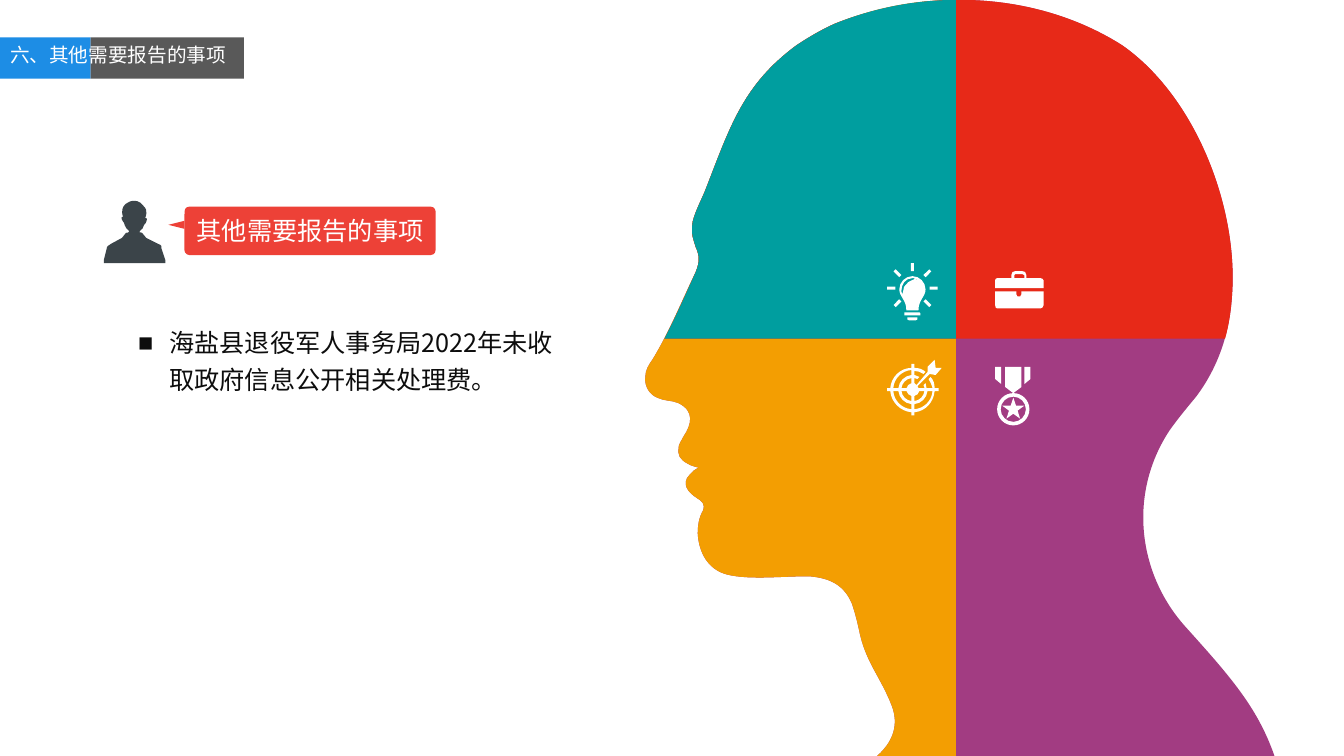
from math import asin, cos, pi, radians, sin, tan

from lxml import etree
from pptx import Presentation
from pptx.dml.color import RGBColor
from pptx.enum.shapes import MSO_SHAPE
from pptx.enum.text import MSO_ANCHOR, MSO_AUTO_SIZE, PP_ALIGN
from pptx.oxml.ns import qn
from pptx.util import Inches, Pt

RECT, ROUNDED, TRIANGLE = MSO_SHAPE.RECTANGLE, MSO_SHAPE.ROUNDED_RECTANGLE, MSO_SHAPE.ISOSCELES_TRIANGLE
TOP, MIDDLE = MSO_ANCHOR.TOP, MSO_ANCHOR.MIDDLE
LEFT, CENTER = PP_ALIGN.LEFT, PP_ALIGN.CENTER
NO_FIT = MSO_AUTO_SIZE.NONE

WHITE = RGBColor(0xFF, 0xFF, 0xFF)
INK = RGBColor(0x0D, 0x0D, 0x0D)
BLUE = RGBColor(0x1D, 0x8D, 0xE5)
GRAY = RGBColor(0x59, 0x59, 0x59)
SLATE = RGBColor(0x3B, 0x44, 0x49)
CORAL = RGBColor(0xED, 0x41, 0x37)
PURPLE = RGBColor(0xA2, 0x3C, 0x82)
ORANGE = RGBColor(0xF3, 0x9E, 0x02)
RED = RGBColor(0xE7, 0x29, 0x18)
TEAL = RGBColor(0x00, 0x9E, 0x9F)
CJK = "Noto Sans CJK SC"

# Content
HEADING = "六、其他需要报告的事项"
CALLOUT = "其他需要报告的事项"
STATEMENT = "海盐县退役军人事务局2022年未收取政府信息公开相关处理费。"

# Outlines in inches: a pair is a straight step, six numbers are a cubic curve
PERSON = [
    (1.6, 2.46), (1.61, 2.45, 1.6, 2.43, 1.57, 2.42), (1.45, 2.36), (1.41, 2.31),
    (1.38, 2.3, 1.37, 2.31, 1.39, 2.29), (1.41, 2.28, 1.42, 2.26, 1.43, 2.23), (1.44, 2.22),
    (1.44, 2.22, 1.48, 2.16, 1.44, 2.16), (1.44, 2.16, 1.48, 2.09, 1.42, 2.04), (1.39, 2.01),
    (1.31, 1.96, 1.24, 2.03, 1.24, 2.03), (1.19, 2.08, 1.22, 2.15, 1.22, 2.15),
    (1.18, 2.15, 1.23, 2.21, 1.23, 2.21), (1.24, 2.24), (1.25, 2.26, 1.26, 2.28, 1.28, 2.29),
    (1.29, 2.31, 1.25, 2.31, 1.25, 2.31), (1.21, 2.36), (1.1, 2.42),
    (1.05, 2.45, 1.06, 2.46, 1.06, 2.46), (1.03, 2.58), (1.03, 2.61), (1.64, 2.61), (1.64, 2.58)]

NAPE = [
    (11.75, 6.21), (11.28, 5.68, 11.19, 4.89, 11.6, 4.27), (11.67, 4.17, 11.76, 4.06, 11.86, 3.94),
    (12.08, 3.65, 12.2, 3.3, 12.22, 2.92)]
BACK_EDGE = [(12.15, 3.36), (12.19, 3.22, 12.21, 3.07, 12.22, 2.92)]
CROWN = [(12.28, 2.06, 11.86, 0.96, 11.13, 0.45), (10.31, -0.07, 9.22, -0.14, 8.27, 0.24)]
FRONT_CROWN = [(9.48, 0), (9.07, 0, 8.66, 0.08, 8.27, 0.24)]
BROW = [
    (8.14, 0.3, 8.02, 0.37, 7.9, 0.45), (7.37, 0.84, 7.24, 1.26, 7.01, 1.85),
    (6.97, 1.96, 6.9, 2.08, 6.87, 2.2), (6.85, 2.33, 6.88, 2.38, 6.9, 2.45),
    (6.94, 2.54, 6.94, 2.6, 6.9, 2.7)]
NOSE_BRIDGE = [(6.8, 2.92, 6.7, 3.15, 6.59, 3.36)]
FACE = [
    (6.76, 2.99, 6.64, 3.29, 6.47, 3.57), (6.44, 3.61, 6.4, 3.67, 6.4, 3.74),
    (6.39, 3.83, 6.44, 3.92, 6.53, 3.95), (6.59, 3.98, 6.66, 3.97, 6.73, 4),
    (6.89, 4.08, 6.86, 4.21, 6.78, 4.33), (6.76, 4.37, 6.73, 4.41, 6.73, 4.44),
    (6.72, 4.51, 6.74, 4.56, 6.82, 4.6), (6.85, 4.62, 6.89, 4.63, 6.93, 4.64),
    (6.89, 4.66, 6.86, 4.68, 6.84, 4.71), (6.75, 4.8, 6.83, 4.89, 6.91, 4.94),
    (6.96, 4.97, 7, 5, 6.97, 5.07), (6.93, 5.14, 6.92, 5.22, 6.92, 5.29),
    (6.93, 5.48, 7.02, 5.65, 7.21, 5.7), (7.45, 5.76, 7.8, 5.71, 8.05, 5.72),
    (8.23, 5.74, 8.37, 5.8, 8.45, 5.99), (8.48, 6.08, 8.5, 6.16, 8.52, 6.25),
    (8.58, 6.56, 8.73, 6.71, 8.84, 6.99), (8.9, 7.14, 8.9, 7.32, 8.7, 7.5)]
SHOULDER = [(12.64, 7.5), (12.47, 7.01, 12.19, 6.7, 11.75, 6.21)]

BULB = [
    [(8.97, 3.1), (9.12, 3.1), (9.13, 3.11), (9.13, 3.13), (8.97, 3.13)],
    [(9.1, 3.15), (9.1, 3.17), (9.08, 3.18), (9.02, 3.18), (9, 3.17), (9, 3.15)],
    [(9.05, 2.74), (9.12, 2.74, 9.18, 2.8, 9.18, 2.87), (9.18, 2.95, 9.11, 2.97, 9.11, 3.08),
     (8.99, 3.08), (8.99, 2.97, 8.92, 2.95, 8.92, 2.87), (8.92, 2.8, 8.98, 2.74, 9.05, 2.74)],
    [(9.07, 2.76), (9.07, 2.77), (9.11, 2.78), (9.09, 2.78), (9.07, 2.77),
     (9.05, 2.78, 9.01, 2.79, 8.99, 2.82), (8.97, 2.83, 8.96, 2.86, 8.96, 2.88), (8.95, 2.92),
     (8.94, 2.89), (8.94, 2.82, 8.98, 2.76, 9.05, 2.76)]]
BRIEFCASE = [
    [(9.87, 2.89), (10.08, 2.89), (10.08, 2.92), (10.09, 2.94), (10.12, 2.94), (10.13, 2.92),
     (10.13, 2.89), (10.35, 2.89), (10.35, 3.03), (10.35, 3.05, 10.33, 3.06, 10.32, 3.06),
     (9.89, 3.06), (9.88, 3.06, 9.87, 3.05, 9.87, 3.03)],
    [(10.06, 2.76), (10.16, 2.76), (10.16, 2.73), (10.14, 2.72), (10.07, 2.72), (10.06, 2.73)],
    [(9.89, 2.76), (10.03, 2.76), (10.03, 2.73), (10.03, 2.7, 10.05, 2.69, 10.07, 2.69),
     (10.14, 2.69), (10.16, 2.69, 10.18, 2.7, 10.18, 2.73), (10.18, 2.76), (10.32, 2.76),
     (10.33, 2.76, 10.35, 2.77, 10.35, 2.78), (10.35, 2.86), (9.87, 2.86), (9.87, 2.78),
     (9.87, 2.77, 9.88, 2.76, 9.89, 2.76)]]
TARGET = [
    (9.07, 3.72), (9.12, 3.74), (9.1, 3.76), (9.07, 3.75), (9.07, 3.8),
    (9.09, 3.82), (9.2, 3.69), (9.2, 3.64), (9.27, 3.57), (9.28, 3.65), (9.34, 3.65), (9.28, 3.72),
    (9.22, 3.71), (9.1, 3.83), (9.11, 3.85), (9.17, 3.85), (9.16, 3.82), (9.18, 3.8), (9.19, 3.85),
    (9.25, 3.85), (9.24, 3.82, 9.23, 3.79, 9.21, 3.76), (9.23, 3.74),
    (9.26, 3.77, 9.27, 3.81, 9.27, 3.85), (9.31, 3.85), (9.31, 3.88), (9.27, 3.88),
    (9.26, 3.99, 9.18, 4.08, 9.07, 4.09), (9.07, 4.12), (9.04, 4.12), (9.04, 4.09),
    (8.93, 4.08, 8.84, 3.99, 8.83, 3.88), (8.8, 3.88), (8.8, 3.85), (8.83, 3.85),
    (8.84, 3.74, 8.93, 3.65, 9.04, 3.65), (9.04, 3.61), (9.07, 3.61), (9.07, 3.65),
    (9.11, 3.65, 9.15, 3.66, 9.18, 3.69), (9.16, 3.71), (9.13, 3.69, 9.1, 3.68, 9.07, 3.68)]
RIBBONS = [
    [(9.87, 3.64), (9.93, 3.64), (9.93, 3.81), (9.87, 3.76)],
    [(9.97, 3.64), (10.13, 3.64), (10.13, 3.84), (10.05, 3.9), (9.97, 3.84)],
    [(10.16, 3.64), (10.22, 3.64), (10.22, 3.76), (10.16, 3.81)]]
BULB_CENTER, TARGET_CENTER, MEDAL_CENTER = (9.05, 2.86), (9.055, 3.865), (10.05, 4.06)


def polar(center, radius, angle):
    return center[0] + radius * cos(angle), center[1] + radius * sin(angle)


def arc(center, radius, start, end):
    reach = radius * 4 / 3 * tan((end - start) / 4)
    first, last = polar(center, radius, start), polar(center, radius, end)
    return [first, polar(first, reach, start + pi / 2) + polar(last, -reach, end + pi / 2) + last]


def circle(center, radius):
    quarters = [arc(center, radius, i * pi / 2, (i + 1) * pi / 2) for i in range(4)]
    return [quarters[0][0]] + [curve for _, curve in quarters]


def ray(angle):
    half = 0.015
    return [polar(polar(BULB_CENTER, r, angle), side * half, angle + pi / 2)
            for r, side in ((0.17, -1), (0.25, -1), (0.25, 1), (0.17, 1))]


def quarter_gap(quarter, inner, outer):
    start, end = quarter * pi / 2, (quarter + 1) * pi / 2
    near, far = asin(0.015 / inner), asin(0.015 / outer)
    return (arc(TARGET_CENTER, inner, start + near, end - near)
            + arc(TARGET_CENTER, outer, end - far, start + far))


def paint(shape, color):
    shape.shadow.inherit = False
    shape.fill.solid()
    shape.fill.fore_color.rgb = color
    shape.line.fill.background()


def draw(outlines, color):
    builder = shapes.build_freeform(*map(Inches, outlines[0][0]), scale=1.0)
    for i, outline in enumerate(outlines):
        if i:
            builder.move_to(*map(Inches, outline[0]))
        points = [(Inches(step[k]), Inches(step[k + 1]))
                  for step in outline[1:] for k in range(0, len(step), 2)]
        builder.add_line_segments(points, close=True)
    shape = builder.convert_to_shape()
    # Join each three steps of a curve into one cubic segment
    segments = iter(list(shape.element.iter(qn("a:lnTo"))))
    for step in (step for outline in outlines for step in outline[1:]):
        segment = next(segments)
        if len(step) == 6:
            curve = etree.Element(qn("a:cubicBezTo"))
            segment.addprevious(curve)
            for part in (segment, next(segments), next(segments)):
                curve.append(part[0])
                part.getparent().remove(part)
    paint(shape, color)


def block(kind, box, color):
    shape = shapes.add_shape(kind, *map(Inches, box))
    paint(shape, color)
    return shape


def write(shape, text, size, font_name, color, frame, paragraph, bullet=None):
    text_frame = shape.text_frame
    text_frame.text = text
    line = text_frame.paragraphs[0]
    if bullet:
        properties = line._p.get_or_add_pPr()
        properties.set("marL", str(Inches(0.31)))
        properties.set("indent", str(-Inches(0.31)))
        etree.SubElement(properties, qn("a:buFont")).set("typeface", "Arial")
        etree.SubElement(properties, qn("a:buChar")).set("char", bullet)
    font = line.runs[0].font
    for target, values in ((text_frame, frame), (line, paragraph),
                           (font, {"size": Pt(size), "name": font_name})):
        for name, value in values.items():
            setattr(target, name, value)
    font.color.rgb = color
    etree.SubElement(line.runs[0]._r.get_or_add_rPr(), qn("a:ea")).set("typeface", CJK)


def place(shape, box):
    for name, value in zip(("left", "top", "width", "height"), box):
        setattr(shape, name, Inches(value))


prs = Presentation()
prs.slide_width, prs.slide_height = Inches(13.33), Inches(7.5)
slide = prs.slides.add_slide(prs.slide_layouts[1])
shapes = slide.shapes
heading, statement = shapes.title, slide.placeholders[1]

# Heading over its two-colour strip
block(RECT, (0, 0.37, 0.9, 0.41), BLUE)
block(RECT, (0.9, 0.37, 1.52, 0.41), GRAY)
place(heading, (0, 0.38, 2.55, 0.34))
plain_frame = {"word_wrap": True, "auto_size": NO_FIT, "vertical_anchor": TOP}
write(heading, HEADING, 14, "Arial", WHITE, plain_frame, {"alignment": LEFT})
heading.element.getparent().append(heading.element)

# Person with callout and statement
draw([PERSON], SLATE)
callout = block(ROUNDED, (1.83, 2.05, 2.49, 0.48), CORAL)
callout.adjustments[0] = 0.1
no_margins = {f"margin_{side}": 0 for side in ("left", "right", "top", "bottom")}
write(callout, CALLOUT, 18, "Arial", WHITE, {"vertical_anchor": MIDDLE, **no_margins}, {"alignment": CENTER})
block(TRIANGLE, (1.71, 2.15, 0.08, 0.16), CORAL).rotation = 270
place(statement, (1.27, 3.14, 4.5, 0.83))
write(statement, STATEMENT, 18, CJK, INK, plain_frame,
      {"alignment": LEFT, "line_spacing": 1.2, "space_before": Pt(0)}, bullet="■")

# Head in four quarters
draw([NAPE + CROWN + BROW + FACE + SHOULDER], PURPLE)
draw([FRONT_CROWN + BROW + FACE + [(9.48, 7.5)]], ORANGE)
draw([BACK_EDGE + CROWN + BROW + NOSE_BRIDGE], RED)
draw([FRONT_CROWN + BROW + NOSE_BRIDGE + [(9.48, 3.36)]], TEAL)

# White icons
rays = [ray(radians(angle)) for angle in range(-225, 46, 45)]
gaps = [quarter_gap(quarter, *radii) for quarter in range(3) for radii in ((0.065, 0.115), (0.145, 0.195))]
rings = [circle(MEDAL_CENTER, radius) for radius in (0.16, 0.125)]
star = [polar(MEDAL_CENTER, 0.045 if i % 2 else 0.115, i * pi / 5 - pi / 2) for i in range(10)]
for icon in (BULB + rays, BRIEFCASE, [TARGET] + gaps, rings + [star] + RIBBONS):
    draw(icon, WHITE)

prs.save("out.pptx")
